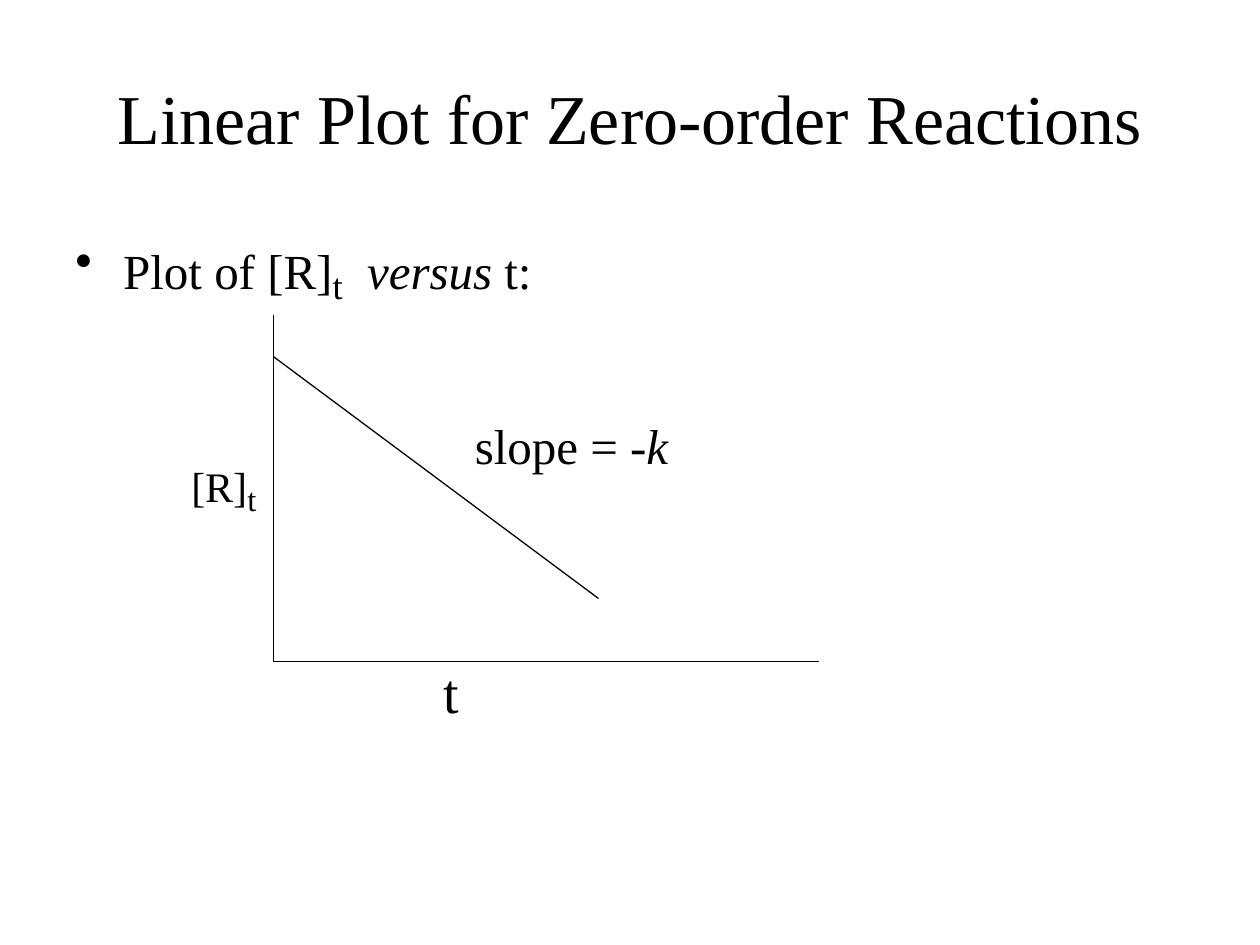
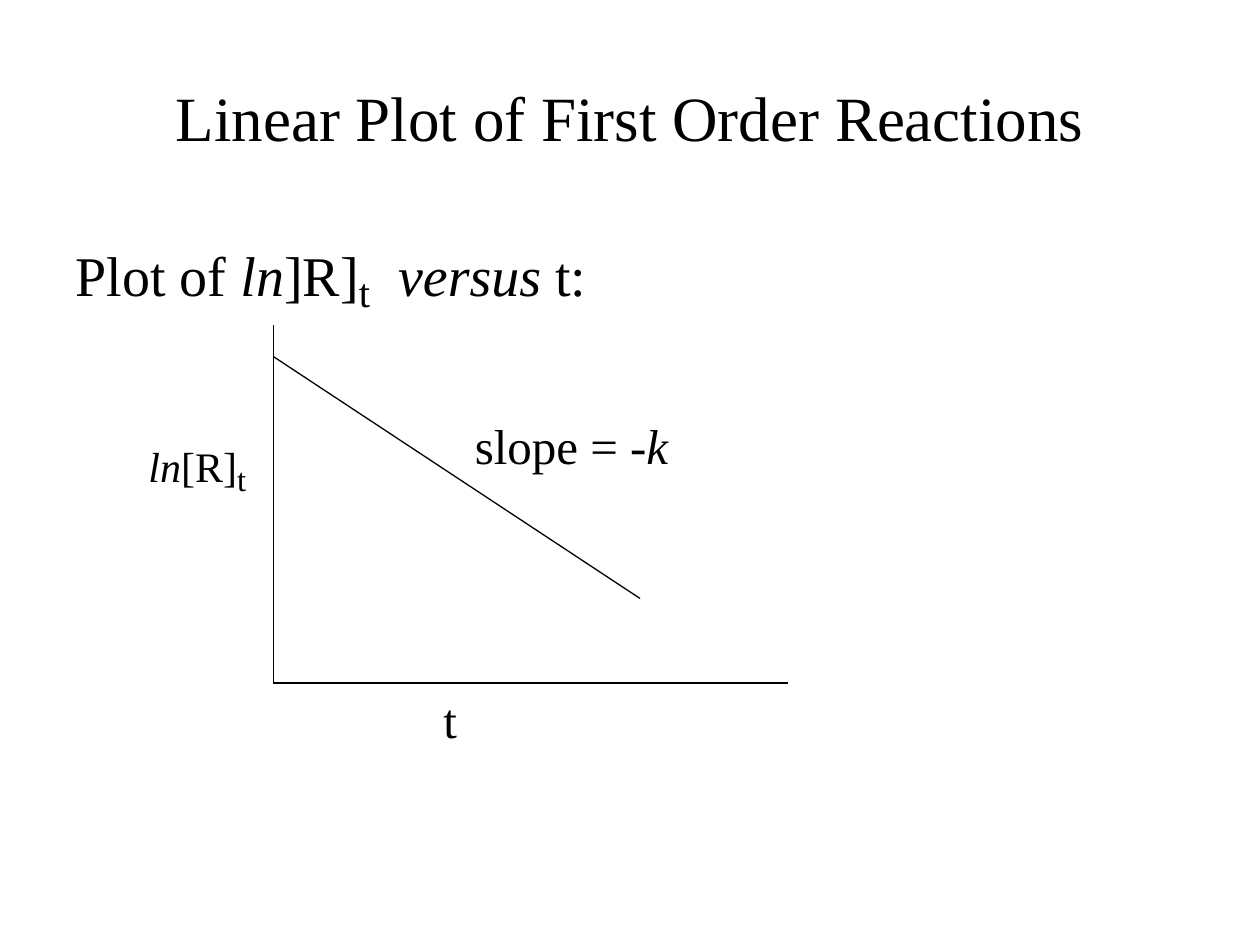
"""Build two slides on linear plots for reaction orders."""
from lxml import etree
from pptx import Presentation
from pptx.dml.color import RGBColor
from pptx.enum import shapes, text
from pptx.oxml import ns
from pptx.util import Inches, Pt

FONT = "Times New Roman"
INK = "000000"
PLAIN, ITALIC, SUB = "plain", "italic", "sub"
AXIS_X = 2.17
LINE_START = 2.83
LINE_END = 4.75
INDENT = 0.38
SLOPE = [("slope = -", PLAIN), ("k", ITALIC)]


def color(value):
    """Turn a hex string into a colour."""
    return RGBColor.from_string(value)


def write_spans(para, spans, size):
    """Write styled runs; subscripts are set 8 points larger and lowered."""
    for words, style in spans:
        span = para.add_run()
        span.text = words
        span.font.name = FONT
        span.font.size = Pt(size + 8 if style == SUB else size)
        span.font.italic = style == ITALIC
        span.font.color.rgb = color(INK)
        if style == SUB:
            span._r.get_or_add_rPr().set("baseline", "-16000")


def add_page(deck, title, size):
    """Add a title-only slide with a centred title."""
    page = deck.slides.add_slide(deck.slide_layouts[5])
    box = page.shapes.title
    box.left, box.top, box.width, box.height = map(Inches, (0.5, 0.3, 9, 1.25))
    frame = box.text_frame
    frame.auto_size = text.MSO_AUTO_SIZE.NONE
    frame.vertical_anchor = text.MSO_ANCHOR.MIDDLE
    para = frame.paragraphs[0]
    para.alignment = text.PP_ALIGN.CENTER
    write_spans(para, [(title, PLAIN)], size)
    return page


def add_statement(page, spans, size, bullet=False):
    """Add the body sentence with a hanging indent and an optional bullet."""
    box = page.shapes.add_textbox(*map(Inches, (0.5, 1.75, 9, 4.95)))
    box.text_frame.word_wrap = True
    para = box.text_frame.paragraphs[0]
    para.space_before = Pt(0.2 * size)
    props = para._p.get_or_add_pPr()
    props.set("marL", str(Inches(INDENT)))
    props.set("indent", str(-Inches(INDENT)))
    if bullet:
        etree.SubElement(props, ns.qn("a:buChar")).set("char", "•")
    else:
        etree.SubElement(props, ns.qn("a:buNone"))
    write_spans(para, spans, size)


def add_label(page, place, spans, size):
    """Add a label that does not wrap."""
    box = page.shapes.add_textbox(*map(Inches, place))
    frame = box.text_frame
    frame.word_wrap = False
    frame.auto_size = text.MSO_AUTO_SIZE.SHAPE_TO_FIT_TEXT
    frame.vertical_anchor = text.MSO_ANCHOR.MIDDLE
    write_spans(frame.paragraphs[0], spans, size)


def add_line(page, start, end):
    """Draw a thin straight line between two points."""
    line = page.shapes.add_connector(
        shapes.MSO_CONNECTOR.STRAIGHT, *map(Inches, (*start, *end)))
    line.line.color.rgb = color(INK)
    line.line.width = Pt(0.75)
    etree.SubElement(line._element.spPr, ns.qn("a:effectLst"))


def add_plot(page, axis_top, axis_bottom, axis_right, line_right):
    """Draw both axes, the falling line and its slope label."""
    origin = (AXIS_X, axis_bottom)
    add_line(page, (AXIS_X, axis_top), origin)
    add_line(page, origin, (axis_right, axis_bottom))
    add_line(page, (AXIS_X, LINE_START), (line_right, LINE_END))
    add_label(page, (3.67, 3.25, 1.81, 0.57), SLOPE, 28)


def main():
    """Build and save the deck."""
    deck = Presentation()
    deck.slide_width, deck.slide_height = Inches(10), Inches(7.5)
    versus = [("t", SUB), ("  ", PLAIN), ("versus", ITALIC), (" t:", PLAIN)]
    concentration = [("[R]", PLAIN), ("t", SUB)]

    page = add_page(deck, "Linear Plot for Zero-order Reactions", 40)
    add_statement(page, [("Plot of [R]", PLAIN), *versus], 28, bullet=True)
    add_plot(page, 2.5, 5.25, 6.5, 4.75)
    add_label(page, (1.42, 3.58, 0.8, 0.5), concentration, 24)
    add_label(page, (3.42, 5.17, 0.44, 0.63), [("t", PLAIN)], 32)

    page = add_page(deck, "Linear Plot of First Order Reactions", 36)
    add_statement(page, [("Plot of ", PLAIN), ("ln", ITALIC), ("]R]", PLAIN), *versus], 32)
    add_plot(page, 2.58, 5.42, 6.25, 5.08)
    add_label(page, (1.08, 3.42, 1.07, 0.5), [("ln", ITALIC), *concentration], 24)
    add_label(page, (3.42, 5.42, 0.41, 0.57), [("t", PLAIN)], 28)

    deck.save("out.pptx")


if __name__ == "__main__":
    main()
